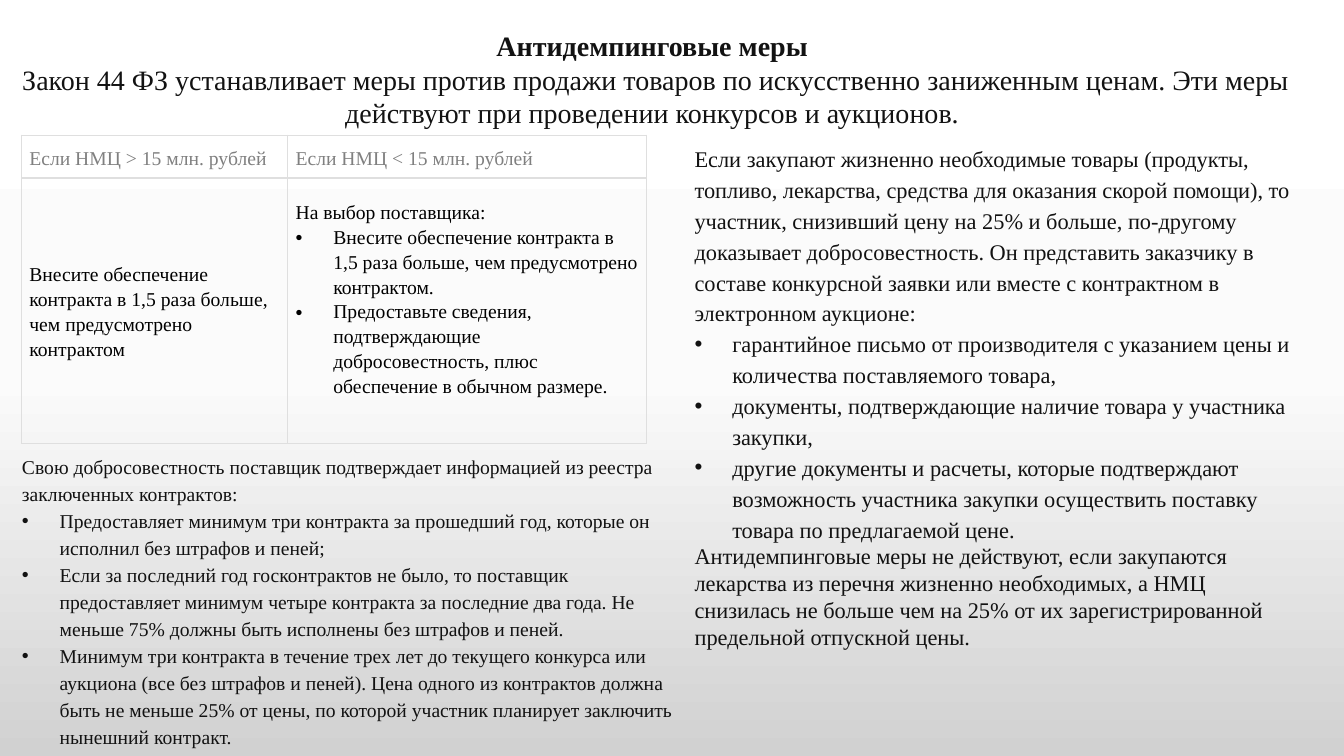
"""Builds a slide on anti-dumping measures in public procurement."""
from copy import deepcopy
from dataclasses import dataclass

from pptx import Presentation
from pptx.dml.color import RGBColor as Color
from pptx.enum.text import MSO_AUTO_SIZE as AutoSize, MSO_ANCHOR as Anchor, PP_ALIGN as Align
from pptx.oxml import parse_xml
from pptx.oxml.ns import nsdecls, qn
from pptx.util import Cm, Pt


@dataclass(frozen=True)
class Theme:
    font: str = "Times New Roman"
    title_size: int = 20
    body_size: int = 16
    small_size: int = 14
    ink: str = "121212"
    cell_ink: str = "000000"
    header_ink: str = "808080"
    border: str = "DFDFDF"
    background: tuple = ((0, "FFFFFF"), (0.5, "FBFBFB"), (1, "D1D1D1"))


theme = Theme()
PLAIN = {"line_spacing": 1.15, "alignment": Align.LEFT}
BULLET = {**PLAIN, "level": 0}
TIGHT = {"line_spacing": 1.0, "alignment": Align.LEFT}
CENTRED = {"line_spacing": 1.0, "alignment": Align.CENTER}


def write(frame, size, color, paragraphs):
    """Fill a text frame with (format, text) paragraphs."""
    for index, (layout, text) in enumerate(paragraphs):
        paragraph = frame.add_paragraph() if index else frame.paragraphs[0]
        for name, value in {"space_before": Pt(0), "space_after": Pt(0), **layout}.items():
            setattr(paragraph, name, value)
        properties = paragraph._p.get_or_add_pPr()
        bulleted = layout is BULLET
        properties.set("marL", str(Cm(0.95) if bulleted else 0))
        properties.set("indent", str(Cm(-0.95) if bulleted else 0))
        if bulleted:
            properties.append(parse_xml(f'<a:buFont {nsdecls("a")} typeface="Arial"/>'))
            properties.append(parse_xml(f'<a:buChar {nsdecls("a")} char="•"/>'))
        else:
            properties.append(parse_xml(f'<a:buNone {nsdecls("a")}/>'))
        run = paragraph.add_run()
        run.text = text
        for name, value in {"name": theme.font, "size": Pt(size), "bold": False}.items():
            setattr(run.font, name, value)
        run.font.color.rgb = Color.from_string(color)


presentation = Presentation()
presentation.slide_width, presentation.slide_height = Cm(33.87), Cm(19.05)
slide = presentation.slides.add_slide(presentation.slide_layouts[3])

fill = slide.background.fill
fill.gradient()
fill.gradient_angle = 270
first_stop = next(slide.element.iter(qn("a:gs")))
first_stop.addnext(deepcopy(first_stop))
for stop, (position, color) in zip(fill.gradient_stops, theme.background):
    stop.position = position
    stop.color.rgb = Color.from_string(color)

columns, rows = (6.71, 9.04), (1.05, 6.68)
cells = [
    [[(PLAIN, "Если НМЦ > 15 млн. рублей")], [(PLAIN, "Если НМЦ < 15 млн. рублей")]],
    [
        [(PLAIN, "Внесите обеспечение контракта в 1,5 раза больше, чем предусмотрено контрактом")],
        [
            (PLAIN, "На выбор поставщика:"),
            (BULLET, "Внесите обеспечение контракта в 1,5 раза больше, чем предусмотрено контрактом."),
            (BULLET, "Предоставьте сведения, подтверждающие добросовестность, "
                     "плюс обеспечение в обычном размере."),
        ],
    ],
]
table = slide.shapes.add_table(
    len(rows), len(columns), Cm(0.54), Cm(3.41), Cm(sum(columns)), Cm(sum(rows))).table
table.first_row = table.horz_banding = False
for column, width in zip(table.columns, columns):
    column.width = Cm(width)
for row_index, (row, height) in enumerate(zip(table.rows, rows)):
    row.height = Cm(height)
    for cell, paragraphs in zip(row.cells, cells[row_index]):
        header = row_index == 0
        write(cell.text_frame, theme.small_size,
              theme.header_ink if header else theme.cell_ink, paragraphs)
        bottom = 0.83 if len(paragraphs) > 1 else 0.2
        for name, value in {"margin_left": Cm(0.2), "margin_right": Cm(0.2),
                            "margin_top": Cm(0.2), "margin_bottom": Cm(bottom),
                            "vertical_anchor": Anchor.MIDDLE}.items():
            setattr(cell, name, value)
        divider = "B" if header else "T"
        for side in "LRTB":
            width = Pt(1.5 if side == divider else 1)
            cell._tc.get_or_add_tcPr().append(parse_xml(
                f'<a:ln{side} {nsdecls("a")} w="{width}"><a:solidFill>'
                f'<a:srgbClr val="{theme.border}"/></a:solidFill></a:ln{side}>'))
        cell.fill.background()

title, left_body, right_body = slide.placeholders
blocks = [
    (title, (0, 0.58, 33.05, 2.82), Anchor.MIDDLE, theme.title_size, [
        (CENTRED, "Антидемпинговые меры "),
        (CENTRED, "Закон 44 ФЗ устанавливает меры против продажи товаров по искусственно "
                  "заниженным ценам. Эти меры действуют при проведении конкурсов и аукционов. "),
    ]),
    (right_body, (17.25, 3.43, 15.8, 13.21), Anchor.TOP, theme.body_size, [
        (PLAIN, "Если закупают жизненно необходимые товары (продукты, топливо, лекарства, "
                "средства для оказания скорой помощи), то участник, снизивший цену на 25% "
                "и больше, по-другому доказывает добросовестность. Он представить заказчику "
                "в составе конкурсной заявки или вместе с контрактном в электронном аукционе:"),
        (BULLET, "гарантийное письмо от производителя с указанием цены "
                 "и количества поставляемого товара,"),
        (BULLET, "документы, подтверждающие наличие товара у участника закупки,"),
        (BULLET, "другие документы и расчеты, которые подтверждают возможность участника "
                 "закупки осуществить поставку товара по предлагаемой цене."),
        (TIGHT, "Антидемпинговые меры не действуют, если закупаются лекарства из перечня "
                "жизненно необходимых, а НМЦ снизилась не больше чем на 25% "
                "от их зарегистрированной предельной отпускной цены."),
    ]),
    (left_body, (0.3, 11.25, 16.94, 7.82), Anchor.TOP, theme.small_size, [
        (PLAIN, "Свою добросовестность поставщик подтверждает информацией "
                "из реестра заключенных контрактов:"),
        (BULLET, "Предоставляет минимум три контракта за прошедший год, "
                 "которые он исполнил без штрафов и пеней;"),
        (BULLET, "Если за последний год госконтрактов не было, то поставщик предоставляет "
                 "минимум четыре контракта за последние два года. "
                 "Не меньше 75% должны быть исполнены без штрафов и пеней."),
        (BULLET, "Минимум три контракта в течение трех лет до текущего конкурса "
                 "или аукциона (все без штрафов и пеней). Цена одного из контрактов "
                 "должна быть не меньше 25% от цены, по которой участник планирует "
                 "заключить нынешний контракт. "),
    ]),
]
for shape, box, anchor, size, paragraphs in blocks:
    for name, value in zip(("left", "top", "width", "height"), box):
        setattr(shape, name, Cm(value))
    frame = shape.text_frame
    for name, value in {"word_wrap": True, "auto_size": AutoSize.SHAPE_TO_FIT_TEXT,
                        "vertical_anchor": anchor}.items():
        setattr(frame, name, value)
    write(frame, size, theme.ink, paragraphs)
title.text_frame.paragraphs[0].runs[0].font.bold = True

presentation.save("out.pptx")
